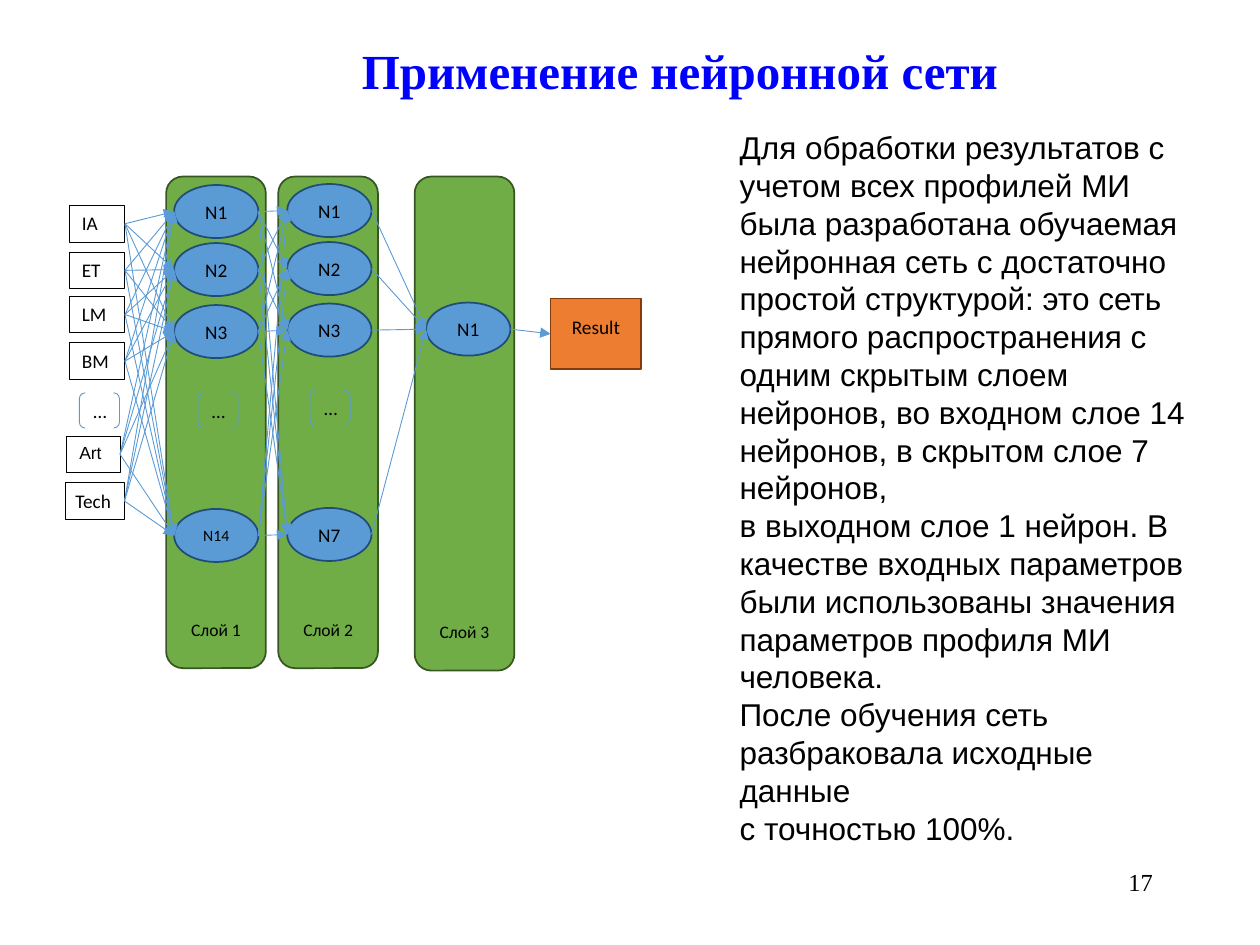
import itertools
from dataclasses import dataclass

import pptx
import pptx.dml.color
import pptx.enum.shapes
import pptx.enum.text
import pptx.oxml.ns
import pptx.shapes.autoshape
import pptx.shapes.connector
import pptx.slide
import pptx.util
from lxml import etree

Cm = pptx.util.Cm
Pt = pptx.util.Pt
RGBColor = pptx.dml.color.RGBColor
Shape = pptx.shapes.autoshape.Shape
Slide = pptx.slide.Slide
ShapeKind = pptx.enum.shapes.MSO_SHAPE
Align = pptx.enum.text.PP_ALIGN
Anchor = pptx.enum.text.MSO_ANCHOR

BLACK = RGBColor(0x00, 0x00, 0x00)
WHITE = RGBColor(0xFF, 0xFF, 0xFF)
TITLE_BLUE = RGBColor(0x00, 0x00, 0xFF)
LAYER_GREEN = RGBColor(0x70, 0xAD, 0x47)
LAYER_EDGE = RGBColor(0x37, 0x56, 0x23)
NEURON_BLUE = RGBColor(0x5B, 0x9B, 0xD5)
NEURON_EDGE = RGBColor(0x1F, 0x4D, 0x78)
RESULT_ORANGE = RGBColor(0xED, 0x7D, 0x31)
RESULT_EDGE = RGBColor(0x82, 0x3B, 0x0B)


@dataclass(frozen=True)
class Area:
    """A rectangle in centimetres."""
    left: float
    top: float
    width: float
    height: float

    def lengths(self) -> tuple:
        return Cm(self.left), Cm(self.top), Cm(self.width), Cm(self.height)


@dataclass(frozen=True)
class TextStyle:
    size: float
    font: str = "Calibri"
    color: RGBColor = BLACK
    bold: bool = False
    align: Align = Align.CENTER


@dataclass(frozen=True)
class Look:
    kind: ShapeKind
    fill: RGBColor | None
    edge: RGBColor
    edge_width: float
    anchor: Anchor = Anchor.MIDDLE


@dataclass(frozen=True)
class Input:
    label: str
    area: Area
    font: str = "Calibri"
    size: float = 11


@dataclass(frozen=True)
class Layer:
    label: str
    area: Area
    neuron_left: float
    neuron_tops: tuple[float, ...]
    neurons: tuple[str, ...]


LAYER_LOOK = Look(ShapeKind.ROUNDED_RECTANGLE, LAYER_GREEN, LAYER_EDGE, 1, Anchor.BOTTOM)
INPUT_LOOK = Look(ShapeKind.RECTANGLE, WHITE, BLACK, 0.5, Anchor.TOP)
NEURON_LOOK = Look(ShapeKind.OVAL, NEURON_BLUE, NEURON_EDGE, 1)
GAP_LOOK = Look(ShapeKind.DOUBLE_BRACKET, None, NEURON_BLUE, 0.5)
RESULT_LOOK = Look(ShapeKind.RECTANGLE, RESULT_ORANGE, RESULT_EDGE, 1)

BODY = (
    "Для обработки результатов с учетом всех профилей МИ была разработана "
    "обучаемая нейронная сеть с достаточно простой структурой: это сеть прямого "
    "распространения с одним скрытым слоем нейронов, во входном слое 14 нейронов, "
    "в скрытом слое 7 нейронов,\vв выходном слое 1 нейрон. В качестве входных "
    "параметров были использованы значения параметров профиля МИ человека.\n"
    "После обучения сеть разбраковала исходные данные\vс точностью 100%."
)
INPUTS = (
    Input("IA", Area(1.4, 4.14, 1.12, 0.74)),
    Input("ET", Area(1.4, 5.08, 1.12, 0.74)),
    Input("LM", Area(1.4, 5.97, 1.12, 0.74)),
    Input("BM", Area(1.4, 6.91, 1.12, 0.74)),
    Input("Art", Area(1.35, 8.79, 1.07, 0.74), "Arial", 10),
    Input("Tech", Area(1.32, 9.73, 1.19, 0.74)),
)
LAYERS = (
    Layer("Слой 1", Area(3.35, 3.56, 2.01, 9.91), 3.51,
          (3.73, 4.9, 6.15, 10.26), ("N1", "N2", "N3", "N14")),
    Layer("Слой 2", Area(5.61, 3.56, 2.01, 9.91), 5.79,
          (3.71, 4.88, 6.12, 10.24), ("N1", "N2", "N3", "N7")),
    Layer("Слой 3", Area(8.36, 3.56, 2.01, 9.96), 8.59, (6.1,), ("N1",)),
)
GAPS = ((1.6, 7.92), (3.99, 7.92), (6.25, 7.87))
UNLINKED = (1, 1)  # the second neurons of layers 1 and 2 share no arrow


def write(shape: Shape, text: str, style: TextStyle) -> None:
    frame = shape.text_frame
    frame.word_wrap = True
    frame.text = text
    for para in frame.paragraphs:
        para.alignment = style.align
        for span in para.runs:
            span.font.size = Pt(style.size)
            span.font.name = style.font
            span.font.bold = style.bold
            span.font.color.rgb = style.color


def add_text(page: Slide, area: Area, text: str, style: TextStyle) -> None:
    write(page.shapes.add_textbox(*area.lengths()), text, style)


def add_node(page: Slide, look: Look, area: Area, text: str, style: TextStyle) -> Shape:
    node = page.shapes.add_shape(look.kind, *area.lengths())
    node.shadow.inherit = False
    if look.fill is None:
        node.fill.background()
    else:
        node.fill.solid()
        node.fill.fore_color.rgb = look.fill
    node.line.color.rgb = look.edge
    node.line.width = Pt(look.edge_width)
    write(node, text, style)
    node.text_frame.vertical_anchor = look.anchor
    return node


def add_arrow(page: Slide, source: Shape, target: Shape) -> pptx.shapes.connector.Connector:
    """Draw an arrow from the right side of one node to the left side of another."""
    arrow = page.shapes.add_connector(
        pptx.enum.shapes.MSO_CONNECTOR.STRAIGHT,
        source.left + source.width, source.top + source.height // 2,
        target.left, target.top + target.height // 2)
    arrow.line.color.rgb = NEURON_BLUE
    arrow.line.width = Pt(0.5)
    qn = pptx.oxml.ns.qn
    etree.SubElement(arrow.line._get_or_add_ln(), qn("a:tailEnd"), type="triangle")
    etree.SubElement(arrow._element.spPr, qn("a:effectLst"))
    if source.auto_shape_type == ShapeKind.RECTANGLE:
        arrow.begin_connect(source, 3)
    if target.auto_shape_type == ShapeKind.RECTANGLE:
        arrow.end_connect(target, 1)
    return arrow


def add_network(page: Slide) -> None:
    for layer in LAYERS:
        panel = add_node(page, LAYER_LOOK, layer.area, layer.label, TextStyle(10))
        panel.text_frame.margin_bottom = Cm(0.47)

    inputs = []
    for item in INPUTS:
        style = TextStyle(item.size, item.font, align=Align.LEFT)
        box = add_node(page, INPUT_LOOK, item.area, item.label, style)
        box.text_frame.margin_right = Cm(0.1)
        inputs.append(box)
    inputs[-1].text_frame.margin_left = Cm(0.2)

    first, hidden, output = [
        [add_node(page, NEURON_LOOK, Area(layer.neuron_left, top, 1.7, 1.07), name,
                  TextStyle(9 if len(name) > 2 else 11))
         for name, top in zip(layer.neurons, layer.neuron_tops)]
        for layer in LAYERS]
    for left, top in GAPS:
        add_node(page, GAP_LOOK, Area(left, top, 0.81, 0.71), "…", TextStyle(11))
    result = add_node(page, RESULT_LOOK, Area(11.1, 6.02, 1.83, 1.42), "Result", TextStyle(11))
    result.text_frame.margin_bottom = Cm(0.41)

    for source, target in itertools.product(inputs, first):
        add_arrow(page, source, target)
    for (row, source), (column, target) in itertools.product(enumerate(first), enumerate(hidden)):
        if (row, column) != UNLINKED:
            add_arrow(page, source, target)
    for source in hidden:
        add_arrow(page, source, output[0])
    add_arrow(page, output[0], result)


def main() -> None:
    deck = pptx.Presentation()
    deck.slide_width, deck.slide_height = Cm(25.4), Cm(19.05)
    page = deck.slides.add_slide(deck.slide_layouts[6])
    add_text(page, Area(2.95, 0.69, 21.51, 1.45), "Применение нейронной сети",
             TextStyle(28, "Times New Roman", TITLE_BLUE, bold=True))
    add_text(page, Area(14.66, 2.46, 9.65, 14.88), BODY,
             TextStyle(18, "Arial", align=Align.LEFT))
    add_text(page, Area(18.21, 17.35, 5.28, 1.27), "17",
             TextStyle(14, "Times New Roman", align=Align.RIGHT))
    add_network(page)
    deck.save("out.pptx")


if __name__ == "__main__":
    main()
